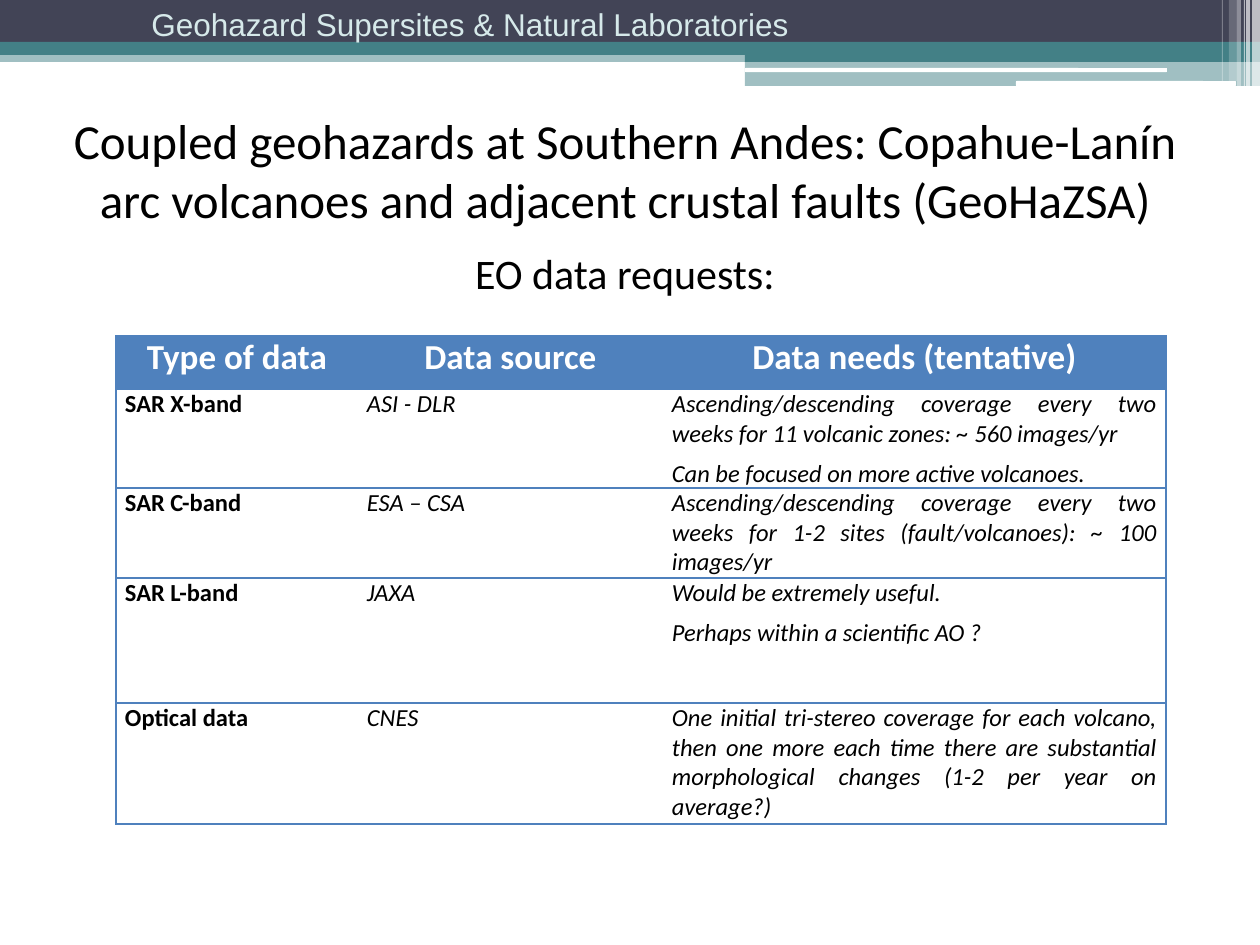
from pptx import Presentation, util as u
from pptx.dml.color import RGBColor
from pptx.enum import shapes, text
from pptx.oxml.ns import qn
from lxml import etree

HEAD = "Geohazard Supersites & Natural Laboratories"
TITLE = ("Coupled geohazards at Southern Andes: Copahue-Lanín arc "
         "volcanoes and adjacent crustal faults (GeoHaZSA)")
SUB = "EO data requests:"
ROWS = [
    ("Type of data", "Data source", "Data needs (tentative)"),
    ("SAR X-band", "ASI - DLR",
     "Ascending/descending coverage every two weeks for 11 volcanic zones: "
     "~ 560 images/yr\nCan be focused on more active volcanoes."),
    ("SAR C-band", "ESA – CSA",
     "Ascending/descending coverage every two weeks for 1-2 sites "
     "(fault/volcanoes): ~ 100 images/yr"),
    ("SAR L-band", "JAXA",
     "Would be extremely useful.\nPerhaps within a scientific AO ?"),
    ("Optical data", "CNES",
     "One initial tri-stereo coverage for each volcano, then one more each "
     "time there are substantial morphological changes "
     "(1-2 per year on average?)"),
]
WIDTHS = [242, 305, 503]
HEIGHTS = [53, 99, 90, 125, 121]
THEME = {
    "teal": "438086", "slate": "424456", "white": "FFFFFF", "black": "000000",
    "pale": "D6E9EA", "blue": "4F81BD",
    "font": "Calibri", "banner": "Arial",
    "title": 28, "sub": 24, "label": 20, "cell": 14, "head": 18,
}
BARS = [
    ((0, 50, 1260, 12), "teal", 50),
    ((0, 0, 1260, 43), "slate", 100),
    ((0, 42, 1260, 13), "teal", 100),
    ((745, 49, 515, 13), "teal", 100),
    ((745, 61, 515, 25), "teal", 50),
]
PILLS = [(745, 68, 422, 4), (1016, 81, 220, 5)]
STRIPES = [(1252, 8, 86, 65), (1246, 4, 86, 65), (1244, 1, 86, 60),
           (1237, 4, 86, 40), (1229, 8, 81, 20), (1222, 1, 81, 30)]


def px(n):
    return round(n * 914400 / 126)


def color(name):
    return RGBColor.from_string(THEME[name])


def style(para, size, tone, font="font", bold=False, slant=False):
    face = para.font
    face.name, face.size = THEME[font], u.Pt(THEME[size])
    face.bold, face.italic = bold, slant
    face.color.rgb = color(tone)


def bar(slide, box, tone, alpha=100, kind=shapes.MSO_SHAPE.RECTANGLE):
    shape = slide.shapes.add_shape(kind, *map(px, box))
    shape.shadow.inherit = False
    shape.line.fill.background()
    shape.fill.solid()
    shape.fill.fore_color.rgb = color(tone)
    if alpha < 100:
        tint = shape.fill._xPr.find(".//" + qn("a:srgbClr"))
        etree.SubElement(tint, qn("a:alpha"), val=str(alpha * 1000))


def border(cell, sides):
    props = cell._tc.get_or_add_tcPr()
    for side in "LRTB":
        line = etree.SubElement(props, qn("a:ln" + side), w=str(u.Pt(1)))
        if side in sides:
            fill = etree.SubElement(line, qn("a:solidFill"))
            etree.SubElement(fill, qn("a:srgbClr"), val=THEME["blue"])
        else:
            etree.SubElement(line, qn("a:noFill"))


def banner(slide):
    for box, tone, alpha in BARS:
        bar(slide, box, tone, alpha)
    for box in PILLS:
        bar(slide, box, "white", kind=shapes.MSO_SHAPE.ROUNDED_RECTANGLE)
    for left, wide, high, alpha in STRIPES:
        bar(slide, (left, 0, wide, high), "white", alpha)
    frame = slide.shapes.add_textbox(*map(px, (139, -1, 684, 50))).text_frame
    frame.word_wrap = False
    frame.auto_size = text.MSO_AUTO_SIZE.SHAPE_TO_FIT_TEXT
    frame.text = HEAD
    style(frame.paragraphs[0], "head", "pale", "banner")


def heading(slide):
    title = slide.shapes.title
    title.left, title.top, title.width, title.height = map(
        px, (42, 105, 1166, 199))
    frame = title.text_frame
    frame.word_wrap = True
    frame.auto_size = text.MSO_AUTO_SIZE.NONE
    frame.vertical_anchor = text.MSO_ANCHOR.MIDDLE
    frame.text = TITLE + "\n" + SUB
    for para, size in zip(frame.paragraphs, ("title", "sub")):
        para.alignment = text.PP_ALIGN.CENTER
        style(para, size, "black")
    frame.paragraphs[1].space_before = u.Pt(11)


def grid(slide):
    box = map(px, (116, 336, sum(WIDTHS), sum(HEIGHTS)))
    table = slide.shapes.add_table(len(ROWS), len(WIDTHS), *box).table
    table.horz_banding = False
    for col, wide in zip(table.columns, WIDTHS):
        col.width = px(wide)
    for r, (row, high) in enumerate(zip(ROWS, HEIGHTS)):
        table.rows[r].height = px(high)
        for c, words in enumerate(row):
            fill_cell(table.cell(r, c), words, r == 0, c)


def fill_cell(cell, words, top, c):
    border(cell, ("LTB", "TB", "TBR")[c])
    cell.margin_left = cell.margin_right = px(9)
    cell.margin_top = cell.margin_bottom = 0
    if top:
        cell.fill.solid()
        cell.fill.fore_color.rgb = color("blue")
    else:
        cell.fill.background()
    cell.text = words
    for para in cell.text_frame.paragraphs:
        para.space_after = u.Pt(6)
        if top:
            para.alignment = text.PP_ALIGN.CENTER
            style(para, "label", "white", bold=True)
        else:
            para.alignment = text.PP_ALIGN.JUSTIFY
            style(para, "cell", "black", bold=c == 0, slant=c > 0)


def main():
    deck = Presentation()
    deck.slide_width, deck.slide_height = px(1260), px(945)
    slide = deck.slides.add_slide(deck.slide_layouts[5])
    banner(slide)
    heading(slide)
    grid(slide)
    deck.save("out.pptx")


if __name__ == "__main__":
    main()
